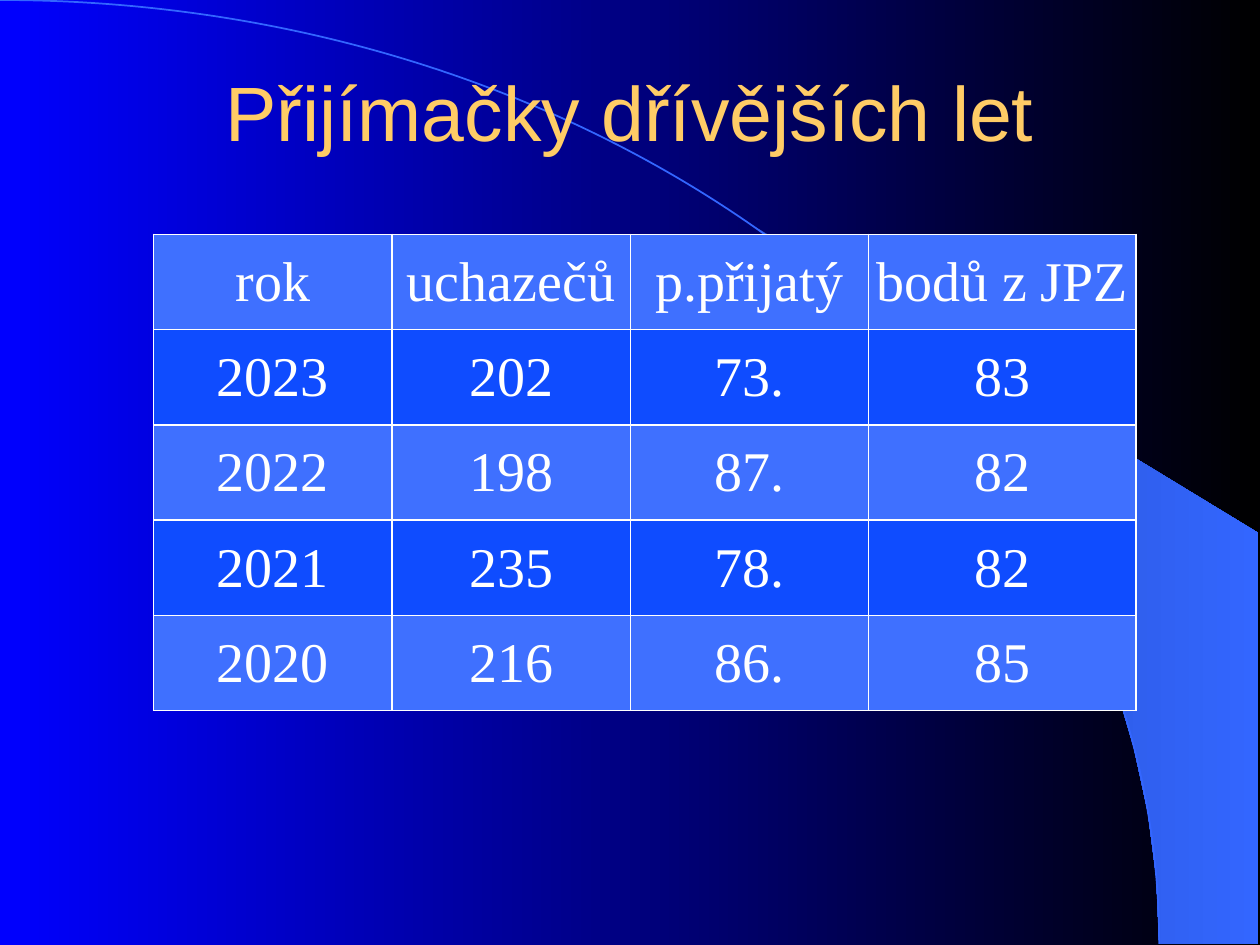
from dataclasses import dataclass
from math import cos, radians, sin
from typing import Any

from lxml.etree import SubElement
from pptx import Presentation
from pptx.dml.color import RGBColor
from pptx.enum.text import MSO_ANCHOR as Anchor, MSO_AUTO_SIZE as AutoSize, PP_ALIGN as Align
from pptx.oxml.ns import qn
from pptx.util import Pt

BLUE = RGBColor(0x00, 0x00, 0xFF)
BLACK = RGBColor(0x00, 0x00, 0x00)
WHITE = RGBColor(0xFF, 0xFF, 0xFF)
GOLD = RGBColor(0xFF, 0xCC, 0x66)
ARC_BLUE = RGBColor(0x33, 0x66, 0xFF)
WEDGE_DARK = RGBColor(0x24, 0x49, 0xB6)
ROW_LIGHT = RGBColor(0x3F, 0x70, 0xFF)
ROW_DARK = RGBColor(0x0F, 0x4C, 0xFF)

ARC_WIDTH, ARC_HEIGHT = 662.4, 539.3
ARC_CONTROLS = [(365.8, 0), (ARC_WIDTH, 241.2), (ARC_WIDTH, ARC_HEIGHT)]
WEDGE_RIGHT, WEDGE_SHOULDER = 719, 304.6
WEDGE_ANGLES = [40, 43, 46, 49, 52, 56, 60, 64, 68, 72, 75, 78, 82, 86, 90]
ROW_HEIGHT = 54.4
CELL_FORMAT = {
    "margin_left": Pt(0.7),
    "margin_right": Pt(0.7),
    "margin_top": Pt(0.7),
    "margin_bottom": Pt(0),
    "vertical_anchor": Anchor.MIDDLE,
}
TITLE_BOX = {"left": Pt(54), "top": Pt(26.4), "width": Pt(612), "height": Pt(73.5)}
TITLE_FRAME = {
    "margin_left": Pt(7.2),
    "margin_right": Pt(7.2),
    "margin_top": Pt(3.6),
    "margin_bottom": Pt(3.6),
    "vertical_anchor": Anchor.MIDDLE,
    "auto_size": AutoSize.NONE,
    "word_wrap": True,
}


@dataclass
class Column:
    heading: str
    width: float
    entries: list[str]


COLUMNS = [
    Column("rok", 136.2, ["2023", "2022", "2021", "2020"]),
    Column("uchazečů", 136.2, ["202", "198", "235", "216"]),
    Column("p.přijatý", 136.2, ["73.", "87.", "78.", "86."]),
    Column("bodů z JPZ", 152.8, ["83", "82", "82", "85"]),
]


def apply_format(target: Any, values: dict[str, Any]) -> None:
    for name, value in values.items():
        setattr(target, name, value)


def write_text(frame: Any, text: str, face: str, size: float, color: RGBColor) -> None:
    paragraph = frame.paragraphs[0]
    paragraph.alignment = Align.CENTER
    run = paragraph.add_run()
    run.text = text
    apply_format(run.font, {"name": face, "size": Pt(size)})
    run.font.color.rgb = color


def fill_gradient(fill: Any, start: RGBColor, end: RGBColor) -> None:
    fill.gradient()
    fill.gradient_angle = 0
    for stop, position, color in zip(fill.gradient_stops, (0, 1), (start, end)):
        stop.position = position
        stop.color.rgb = color


def draw_outline(slide: Any, points: list[tuple[float, float]], close: bool) -> Any:
    corners = [(Pt(x), Pt(y)) for x, y in points]
    builder = slide.shapes.build_freeform(*corners[0])
    builder.add_line_segments(corners[1:], close=close)
    outline = builder.convert_to_shape()
    outline.shadow.inherit = False
    return outline


def draw_wedge(slide: Any) -> None:
    rim = [
        (ARC_WIDTH * sin(radians(angle)), ARC_HEIGHT * (1 - cos(radians(angle))))
        for angle in WEDGE_ANGLES
    ]
    corners = [(WEDGE_RIGHT, ARC_HEIGHT), (WEDGE_RIGHT, WEDGE_SHOULDER)]
    wedge = draw_outline(slide, corners + rim, True)
    fill_gradient(wedge.fill, WEDGE_DARK, ARC_BLUE)
    wedge.line.fill.background()


def draw_arc(slide: Any) -> None:
    arc = draw_outline(slide, [(0, 0), (ARC_WIDTH, ARC_HEIGHT)], False)
    straight = next(arc._element.iter(qn("a:lnTo")))
    outline = straight.getparent()
    outline.remove(straight)
    curve = SubElement(outline, qn("a:cubicBezTo"))
    for x, y in ARC_CONTROLS:
        SubElement(curve, qn("a:pt"), x=str(Pt(x)), y=str(Pt(y)))
    arc.fill.background()
    arc.line.color.rgb = ARC_BLUE
    arc.line.width = Pt(1)


def add_borders(cell: Any) -> None:
    properties = cell._tc.get_or_add_tcPr()
    for side in ("a:lnL", "a:lnR", "a:lnT", "a:lnB"):
        border = SubElement(properties, qn(side), w=str(Pt(1)))
        SubElement(SubElement(border, qn("a:solidFill")), qn("a:srgbClr"), val=str(WHITE))


def draw_results(slide: Any) -> None:
    row_count = len(COLUMNS[0].entries) + 1
    width = sum(column.width for column in COLUMNS)
    results = slide.shapes.add_table(
        row_count, len(COLUMNS), Pt(87.8), Pt(134), Pt(width), Pt(ROW_HEIGHT * row_count)
    ).table
    for row in results.rows:
        row.height = Pt(ROW_HEIGHT)
    for column_index, column in enumerate(COLUMNS):
        results.columns[column_index].width = Pt(column.width)
        for row_index, text in enumerate([column.heading, *column.entries]):
            cell = results.cell(row_index, column_index)
            apply_format(cell, CELL_FORMAT)
            add_borders(cell)
            cell.fill.solid()
            cell.fill.fore_color.rgb = ROW_DARK if row_index % 2 else ROW_LIGHT
            write_text(cell.text_frame, text, "Times New Roman", 32, WHITE)


def main() -> None:
    deck = Presentation()
    apply_format(deck, {"slide_width": Pt(720), "slide_height": Pt(540)})
    slide = deck.slides.add_slide(deck.slide_layouts[5])
    fill_gradient(slide.background.fill, BLUE, BLACK)
    draw_wedge(slide)
    draw_arc(slide)
    title = slide.shapes.title
    slide.shapes._spTree.append(title._element)
    apply_format(title, TITLE_BOX)
    apply_format(title.text_frame, TITLE_FRAME)
    write_text(title.text_frame, "Přijímačky dřívějších let", "Arial", 44, GOLD)
    draw_results(slide)
    deck.save("out.pptx")


if __name__ == "__main__":
    main()
